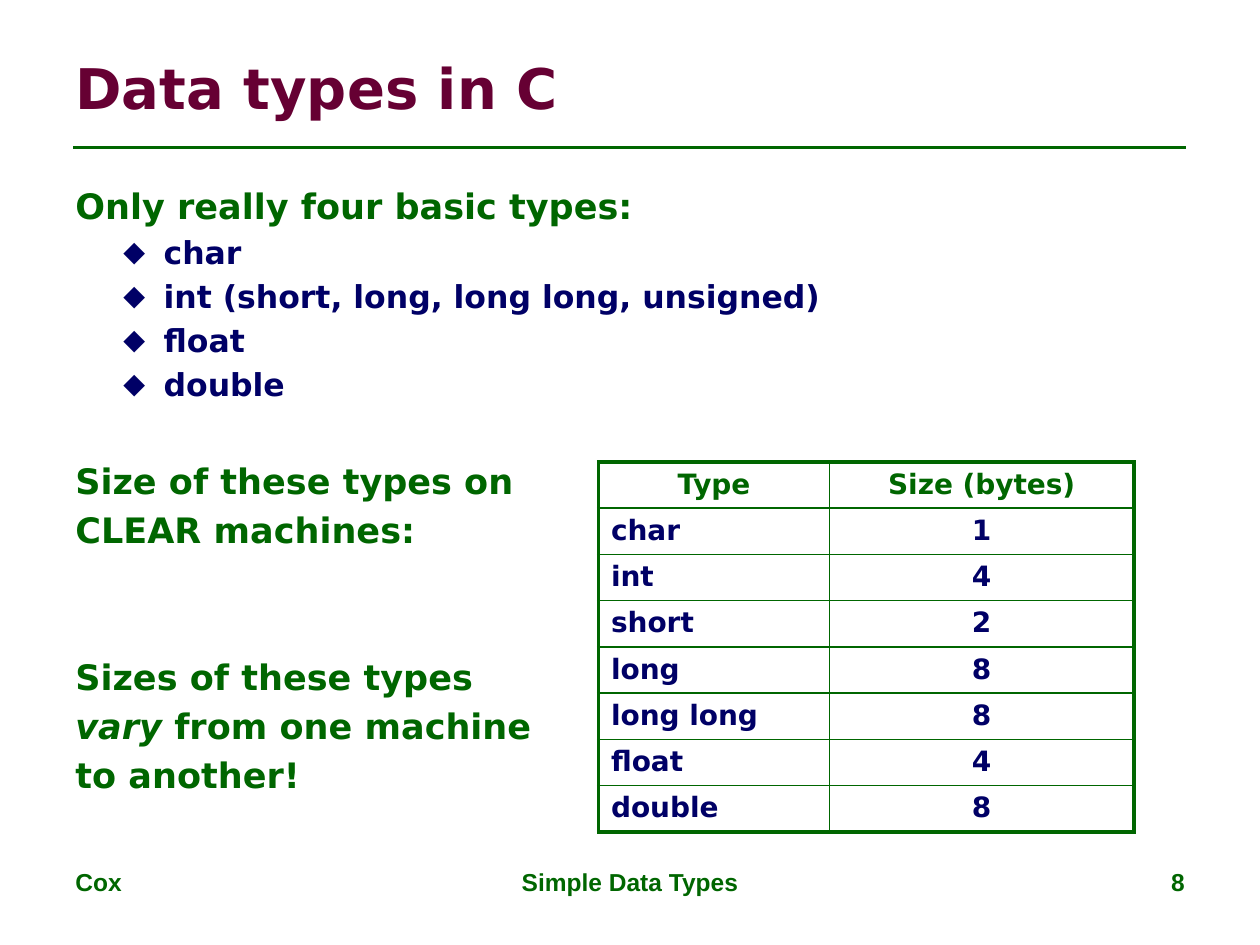
from dataclasses import dataclass
from lxml.etree import SubElement
from pptx import Presentation
from pptx.dml.color import RGBColor as Color
from pptx.enum.shapes import MSO_CONNECTOR as Connector
from pptx.enum.text import MSO_ANCHOR as Anchor, PP_ALIGN as Align
from pptx.oxml import parse_xml
from pptx.oxml.ns import nsdecls, qn
from pptx.util import Pt


@dataclass(frozen=True)
class Theme:
    title: str = "660033"
    green: str = "006600"
    navy: str = "000066"
    font: str = "DejaVu Sans"
    footer_font: str = "Arial"
    title_size: int = 32
    body_size: int = 20
    item_size: int = 18
    table_size: int = 16
    footer_size: int = 14
    outer_line: float = 2.25
    inner_line: float = 1


THEME = Theme()
TITLE = "Data types in C"
TYPES_HEADING = "Only really four basic types:"
TYPES = ["char", "int (short, long, long long, unsigned)", "float", "double"]
NOTES = [
    (1, ["Size of these types on", "CLEAR machines:"]),
    (2, ["Sizes of these types", [("vary", True), (" from one machine", False)],
         "to another!"]),
]
SIZES = [
    ("Type", "Size (bytes)"),
    ("char", "1"), ("int", "4"), ("short", "2"), ("long", "8"),
    ("long long", "8"), ("float", "4"), ("double", "8"),
]
FOOTERS = [
    ("Cox", 36, 168, Align.LEFT),
    ("Simple Data Types", 246, 228, Align.CENTER),
    ("8", 516, 168, Align.RIGHT),
]
COLUMNS = [132, 174]
ROW_HEIGHT = 26.4
RULE_TOP = 84.24
LINE_HEIGHT = 24
BODY_GAP, ITEM_GAP = 4, 3.6


def write(frame, text, size=THEME.body_size, color=THEME.green, font=THEME.font,
          align=Align.LEFT, before=0, bullet=False):
    para = frame.paragraphs[0]
    if para.runs:
        para = frame.add_paragraph()
    para.alignment = align
    para.space_before = Pt(before)
    for words, italic in [(text, False)] if isinstance(text, str) else text:
        span = para.add_run()
        span.text = words
        span.font.name = font
        span.font.size = Pt(size)
        span.font.bold = True
        span.font.italic = italic
        span.font.color.rgb = Color.from_string(color)
    if bullet:
        props = para._p.get_or_add_pPr()
        props.set("marL", str(Pt(50.4)))
        props.set("indent", str(-Pt(23)))
        SubElement(props, qn("a:buSzPct"), val="90000")
        SubElement(props, qn("a:buFont"), typeface=font)
        SubElement(props, qn("a:buChar"), char="◆")


def add_box(page, left, top, width, height, anchor=Anchor.TOP):
    box = page.shapes.add_textbox(Pt(left), Pt(top), Pt(width), Pt(height))
    frame = box.text_frame
    frame.word_wrap = True
    frame.vertical_anchor = anchor
    return frame


def add_rule(page):
    rule = page.shapes.add_connector(
        Connector.STRAIGHT, Pt(42), Pt(RULE_TOP), Pt(678), Pt(RULE_TOP))
    rule.line.color.rgb = Color.from_string(THEME.green)
    rule.line.width = Pt(1.5)
    SubElement(rule._element.spPr, qn("a:effectLst"))


def add_body(page):
    frame = add_box(page, 36, 102, 516, 380)
    write(frame, TYPES_HEADING, before=BODY_GAP)
    for item in TYPES:
        write(frame, item, size=THEME.item_size, color=THEME.navy,
              before=ITEM_GAP, bullet=True)
    for skipped, lines in NOTES:
        for index, line in enumerate(lines):
            extra = skipped * (LINE_HEIGHT + BODY_GAP) if index == 0 else 0
            write(frame, line, before=BODY_GAP + extra)


def set_borders(cell, outer_edges):
    props = cell._tc.get_or_add_tcPr()
    for index, (edge, outer) in enumerate(outer_edges.items()):
        width = Pt(THEME.outer_line if outer else THEME.inner_line)
        props.insert(index, parse_xml(
            f'<a:ln{edge} {nsdecls("a")} w="{width}"><a:solidFill>'
            f'<a:srgbClr val="{THEME.green}"/></a:solidFill></a:ln{edge}>'))


def add_sizes(page):
    last_row, last_column = len(SIZES) - 1, len(COLUMNS) - 1
    table = page.shapes.add_table(
        len(SIZES), len(COLUMNS), Pt(342), Pt(264),
        Pt(sum(COLUMNS)), Pt(ROW_HEIGHT * len(SIZES))).table
    table.first_row = table.horz_banding = False
    for column, width in zip(table.columns, COLUMNS):
        column.width = Pt(width)
    for r, values in enumerate(SIZES):
        table.rows[r].height = Pt(ROW_HEIGHT)
        for c, value in enumerate(values):
            cell = table.cell(r, c)
            cell.fill.background()
            centred = r == 0 or c == last_column
            write(cell.text_frame, value, size=THEME.table_size,
                  color=THEME.navy if r else THEME.green,
                  align=Align.CENTER if centred else Align.LEFT)
            set_borders(cell, {"L": c == 0, "R": c == last_column,
                               "T": r == 0, "B": r == last_row})


def main():
    deck = Presentation()
    deck.slide_width, deck.slide_height = Pt(720), Pt(540)
    page = deck.slides.add_slide(deck.slide_layouts[6])
    add_rule(page)
    for text, left, width, align in FOOTERS:
        write(add_box(page, left, 492, width, 37.5), text, align=align,
              size=THEME.footer_size, font=THEME.footer_font)
    write(add_box(page, 36, 21.6, 648, 56, Anchor.MIDDLE), TITLE,
          size=THEME.title_size, color=THEME.title)
    add_body(page)
    add_sizes(page)
    deck.save("out.pptx")


if __name__ == "__main__":
    main()
